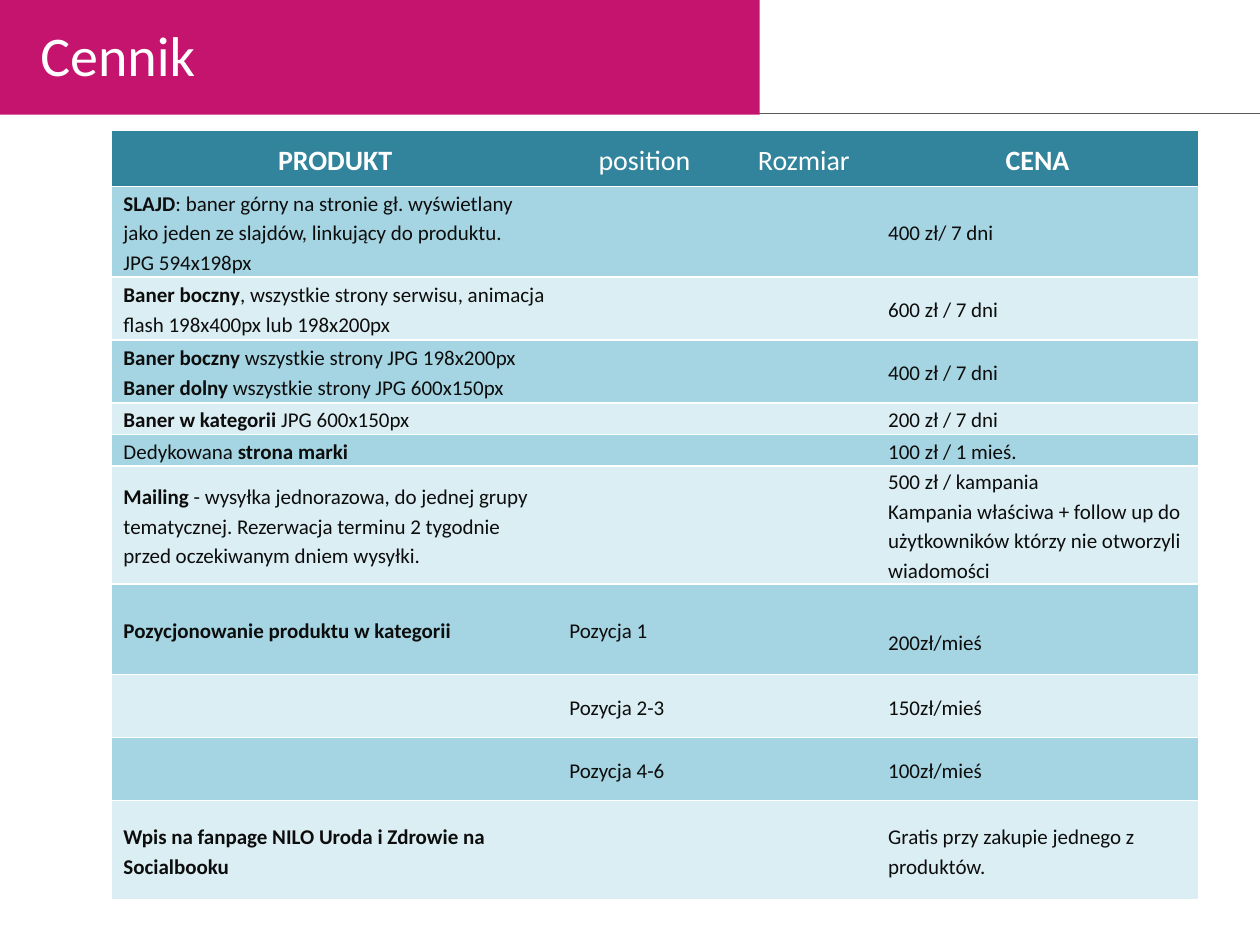
from lxml import etree
from pptx import Presentation, util as u
from pptx.dml.color import RGBColor
from pptx.enum import shapes, text
from pptx.oxml import ns

PLAIN = "{2D5ABB26-0587-4C30-8999-92F81FD0307C}"
WIDTHS = [35.4, 13.7, 11.6, 25.5]
HEIGHTS = [4.5, 7.2, 5, 5, 2.5, 2.5, 9.3, 7.2, 5, 5, 7.9]
HEAD = ["*PRODUKT*", "position", "Rozmiar", "*CENA*"]
ROWS = [
    ["*SLAJD*: baner górny na stronie gł. wyświetlany jako jeden ze slajdów, "
     "linkujący do produktu.\nJPG 594x198px", "", "", "400 zł/ 7 dni"],
    ["*Baner boczny*, wszystkie strony serwisu, animacja\n"
     "flash 198x400px lub 198x200px", "", "", "600 zł / 7 dni"],
    ["*Baner boczny *wszystkie strony JPG 198x200px\n"
     "*Baner dolny *wszystkie strony JPG 600x150px", "", "", "400 zł / 7 dni"],
    ["*Baner w kategorii *JPG 600x150px", "", "", "200 zł / 7 dni"],
    ["Dedykowana *strona marki*", "", "", "100 zł / 1 mieś."],
    ["*Mailing *- wysyłka jednorazowa, do jednej grupy tematycznej. Rezerwacja "
     "terminu 2 tygodnie przed oczekiwanym dniem wysyłki.", "", "",
     "500 zł / kampania\nKampania właściwa + follow up do użytkowników "
     "którzy nie otworzyli wiadomości"],
    ["*Pozycjonowanie produktu w kategorii*", "Pozycja 1", "", "200zł/mieś"],
    ["", "Pozycja 2-3", "", "150zł/mieś"],
    ["", "Pozycja 4-6", "", "100zł/mieś"],
    ["*Wpis na fanpage NILO Uroda i Zdrowie na Socialbooku*", "", "",
     "Gratis przy zakupie jednego z produktów."],
]


def color(code):
    return RGBColor.from_string(code)


class Deck:
    font = "Calibri"
    pink, gray, white, ink = "C5146E", "595959", "FFFFFF", "0D0D0D"
    teal, bands = "31849B", ["A5D5E2", "DAEEF3"]

    def __init__(self):
        self.prs = Presentation()
        self.prs.slide_width, self.prs.slide_height = u.Inches(10), u.Inches(7.5)
        self.unit = self.prs.slide_width / 100
        self.slide = self.prs.slides.add_slide(self.prs.slide_layouts[5])

    def span(self, *cells):
        return [round(cell * self.unit) for cell in cells]

    def runs(self, para, words, size, tint):
        for num, part in enumerate(words.split("*")):
            if part:
                run = para.add_run()
                run.text = part
                run.font.name, run.font.size = self.font, u.Pt(size)
                run.font.bold = num % 2 == 1
                run.font.color.rgb = color(tint)

    def line(self, *ends):
        rule = self.slide.shapes.add_connector(
            shapes.MSO_CONNECTOR.STRAIGHT, *self.span(*ends))
        rule.line.color.rgb, rule.line.width = color(self.gray), u.Pt(0.75)
        etree.SubElement(rule._element.spPr, ns.qn("a:effectLst"))

    def band(self, *box):
        bar = self.slide.shapes.add_shape(shapes.MSO_SHAPE.RECTANGLE, *self.span(*box))
        bar.shadow.inherit = False
        bar.fill.solid()
        bar.fill.fore_color.rgb = color(self.pink)
        bar.line.fill.background()

    def title(self, words, *box):
        head = self.slide.shapes.title
        head.left, head.top, head.width, head.height = self.span(*box)
        frame = head.text_frame
        frame.auto_size = text.MSO_AUTO_SIZE.NONE
        frame.vertical_anchor = text.MSO_ANCHOR.TOP
        para = frame.paragraphs[0]
        para.alignment, para.line_spacing = text.PP_ALIGN.LEFT, u.Pt(30)
        self.runs(para, words, 32, self.white)
        self.slide.shapes._spTree.append(head._element)

    def edge(self, cell):
        props = cell._tc.get_or_add_tcPr()
        for spot, side in enumerate(["a:lnT", "a:lnB"]):
            ln = etree.Element(ns.qn(side), w=str(u.Pt(1)))
            fill = etree.SubElement(ln, ns.qn("a:solidFill"))
            etree.SubElement(fill, ns.qn("a:srgbClr"), val=self.white)
            props.insert(spot, ln)

    def cell(self, cell, words, fill, size, tint, align):
        cell.fill.solid()
        cell.fill.fore_color.rgb = color(fill)
        self.edge(cell)
        cell.vertical_anchor = text.MSO_ANCHOR.MIDDLE
        cell.margin_left = cell.margin_right = u.Inches(0.09)
        cell.margin_top = cell.margin_bottom = 0
        for num, part in enumerate(words.split("\n")):
            frame = cell.text_frame
            para = frame.add_paragraph() if num else frame.paragraphs[0]
            para.alignment, para.line_spacing = align, 1.15
            self.runs(para, part, size, tint)
            if not part:
                etree.SubElement(para._p, ns.qn("a:endParaRPr"), sz=str(size * 100))

    def table(self, left, top):
        box = self.span(left, top, sum(WIDTHS), sum(HEIGHTS))
        grid = self.slide.shapes.add_table(len(HEIGHTS), len(WIDTHS), *box).table
        grid._tbl.tblPr.find(ns.qn("a:tableStyleId")).text = PLAIN
        for col, wide in zip(grid.columns, self.span(*WIDTHS)):
            col.width = wide
        for row, high in zip(grid.rows, self.span(*HEIGHTS)):
            row.height = high
        for num, row in enumerate([HEAD] + ROWS):
            if num:
                look = self.bands[(num - 1) % 2], 12, self.ink, text.PP_ALIGN.LEFT
            else:
                look = self.teal, 16, self.white, text.PP_ALIGN.CENTER
            for col, words in enumerate(row):
                self.cell(grid.cell(num, col), words, *look)
        grid.cell(7, 3).margin_top = u.Inches(0.2)


def main():
    deck = Deck()
    deck.line(0, 9, 100, 9)
    deck.band(0, 0, 60.3, 9.1)
    deck.table(8.9, 10.3)
    deck.title("Cennik", 2.2, 2.3, 55.5, 5.4)
    deck.prs.save("out.pptx")


if __name__ == "__main__":
    main()
